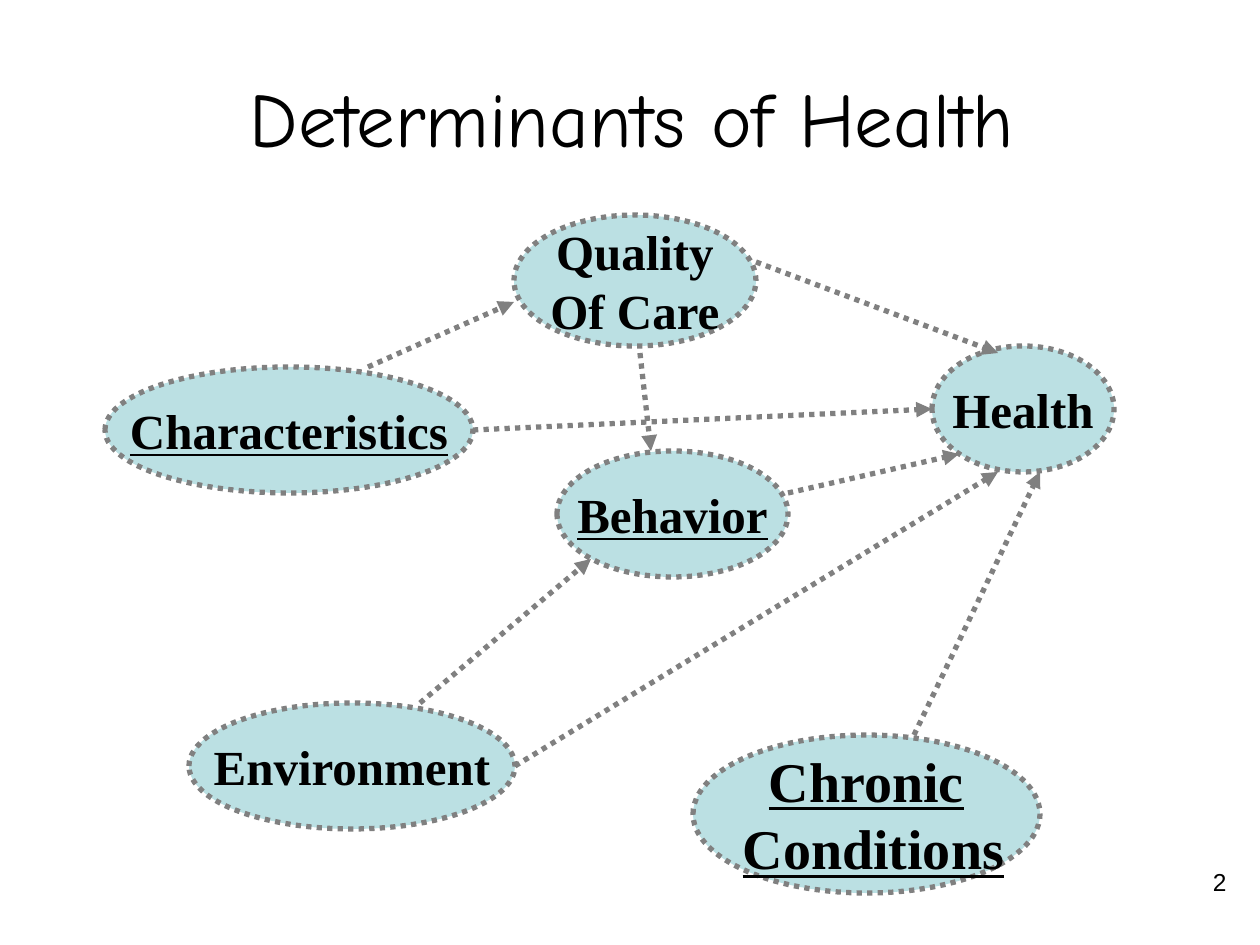
from typing import NamedTuple

from lxml.etree import SubElement
from pptx import Presentation
from pptx.dml.color import RGBColor
from pptx.enum.dml import MSO_LINE_DASH_STYLE as Dash
from pptx.enum.shapes import MSO_CONNECTOR as Connector, MSO_SHAPE as Shape
from pptx.enum.text import MSO_ANCHOR as Anchor, PP_ALIGN as Align
from pptx.oxml.ns import qn
from pptx.util import Pt

EMU_PER_PX = 914400 / 126
BLACK, GREY, PALE_TEAL = "000000", "808080", "BBE0E3"


class Factor(NamedTuple):
    lines: tuple[str, ...]
    left: int
    top: int
    width: int
    height: int = 126
    size: int = 28
    underline: bool = False


class Influence(NamedTuple):
    x1: int
    y1: int
    x2: int
    y2: int


FACTORS = [
    Factor(("Health",), 932, 346, 182),
    Factor(("Behavior",), 557, 451, 231, underline=True),
    Factor(("Environment",), 189, 703, 326),
    Factor(("Characteristics",), 105, 367, 368, underline=True),
    Factor(("Quality", "Of Care"), 514, 215, 242, 131),
    Factor(("Chronic", " Conditions"), 693, 735, 347, 158, 32, True),
]

INFLUENCES = [
    Influence(515, 766, 998, 472),   # environment to health
    Influence(473, 430, 932, 409),   # characteristics to health
    Influence(756, 262, 998, 353),   # quality to health
    Influence(368, 367, 514, 302),   # characteristics to quality
    Influence(788, 493, 959, 454),   # behavior to health
    Influence(420, 703, 591, 559),   # environment to behavior
    Influence(640, 353, 651, 451),   # quality to behavior
    Influence(914, 735, 1040, 472),  # conditions to health
]


def px(*lengths: int) -> list[int]:
    return [round(length * EMU_PER_PX) for length in lengths]


def color(value: str) -> RGBColor:
    return RGBColor.from_string(value)


def apply(target, formats: dict) -> None:
    for name, value in formats.items():
        setattr(target, name, value)


def add_words(paragraph, words: str, font: str, size: int, **formats) -> None:
    run = paragraph.add_run()
    run.text = words
    apply(run.font, {"name": font, "size": Pt(size), **formats})
    run.font.color.rgb = color(BLACK)


def dot_line(line) -> None:
    line.color.rgb = color(GREY)
    apply(line, {"width": Pt(3), "dash_style": Dash.ROUND_DOT})


def draw_factor(slide, factor: Factor) -> None:
    oval = slide.shapes.add_shape(
        Shape.OVAL, *px(factor.left, factor.top, factor.width, factor.height))
    oval.shadow.inherit = False
    oval.fill.solid()
    oval.fill.fore_color.rgb = color(PALE_TEAL)
    dot_line(oval.line)
    frame = oval.text_frame
    apply(frame, {"word_wrap": False, "vertical_anchor": Anchor.MIDDLE})
    for index, line in enumerate(factor.lines):
        paragraph = frame.add_paragraph() if index else frame.paragraphs[0]
        paragraph.alignment = Align.CENTER
        word = line.lstrip()
        if word != line:  # the leading space carries no underline
            add_words(paragraph, " ", "Times New Roman", factor.size, bold=True)
        add_words(paragraph, word, "Times New Roman", factor.size,
                  bold=True, underline=factor.underline)


def draw_influence(slide, influence: Influence) -> None:
    arrow = slide.shapes.add_connector(Connector.STRAIGHT, *px(*influence))
    dot_line(arrow.line)
    SubElement(arrow.line._get_or_add_ln(), qn("a:tailEnd"), type="triangle")
    SubElement(arrow._element.spPr, qn("a:effectLst"))


def main() -> None:
    deck = Presentation()
    deck.slide_width, deck.slide_height = px(1260, 945)
    slide = deck.slides.add_slide(deck.slide_layouts[5])

    # Title
    title = slide.shapes.title
    left, top, width, height = px(4, 38, 1256, 158)
    apply(title, {"left": left, "top": top, "width": width, "height": height})
    title.text_frame.vertical_anchor = Anchor.MIDDLE
    heading = title.text_frame.paragraphs[0]
    heading.alignment = Align.CENTER
    add_words(heading, "Determinants of Health", "Comic Neue", 44)

    # Page number
    page_box = slide.shapes.add_textbox(*px(1016, 861, 223, 66))
    page_box.text_frame.word_wrap = True
    page_number = page_box.text_frame.paragraphs[0]
    page_number.alignment = Align.RIGHT
    add_words(page_number, "2", "Arial", 14)

    # Factors and the arrows between them
    for factor in FACTORS:
        draw_factor(slide, factor)
    for influence in INFLUENCES:
        draw_influence(slide, influence)

    deck.save("out.pptx")


if __name__ == "__main__":
    main()
